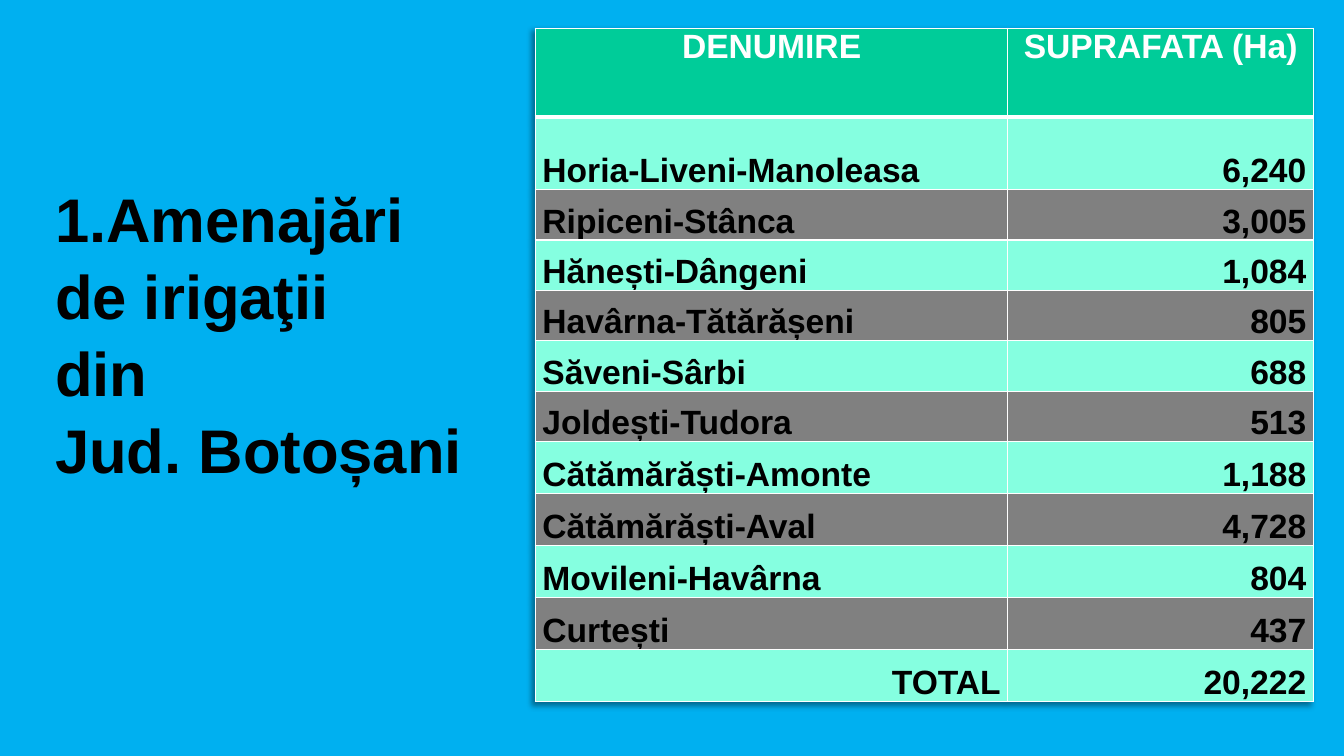
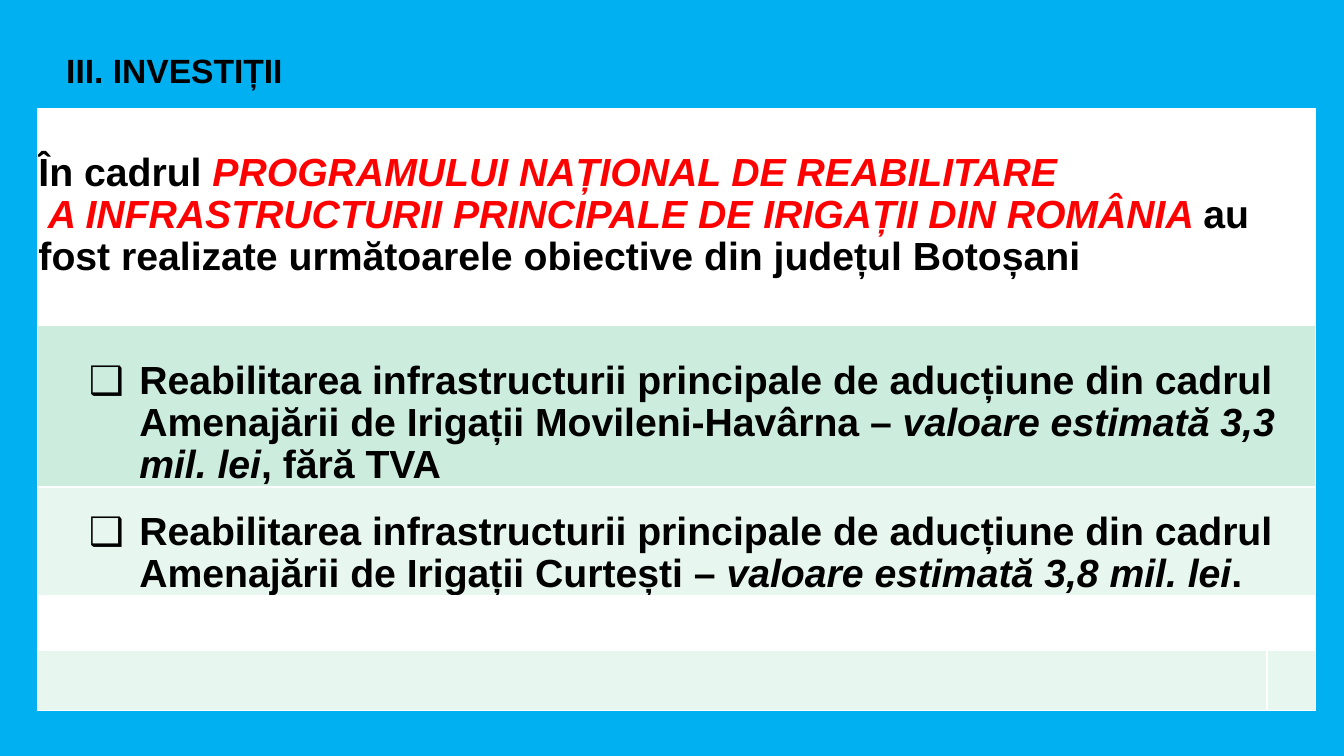
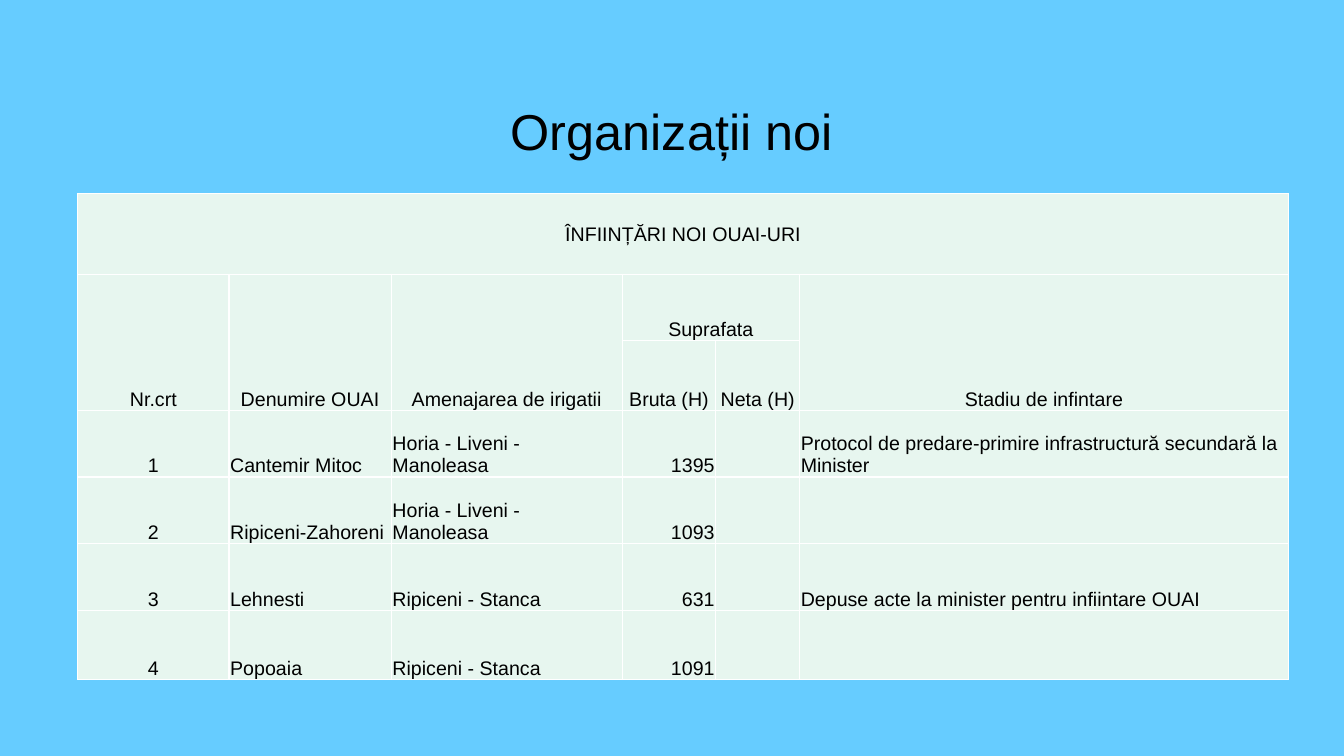
from dataclasses import dataclass

from lxml.etree import SubElement
from pptx import Presentation
from pptx.dml.color import RGBColor
from pptx.enum.text import MSO_ANCHOR, PP_ALIGN
from pptx.oxml import parse_xml
from pptx.oxml.ns import nsdecls, qn
from pptx.util import Cm, Pt


@dataclass(frozen=True)
class Theme:
    font: str = "Arial"
    sky: str = "00B0F0"
    pale: str = "66CCFF"
    ink: str = "000000"
    white: str = "FFFFFF"
    red: str = "FF0000"
    green: str = "00CC99"
    mint: str = "85FFE0"
    gray: str = "808080"
    sage: str = "CCECDE"
    mist: str = "E7F6EF"
    huge: int = 44
    big: int = 36
    lead: int = 28
    mid: int = 24
    small: int = 14


T = Theme()
ALIGN = {"l": PP_ALIGN.LEFT, "c": PP_ALIGN.CENTER, "r": PP_ALIGN.RIGHT}
TOP, MID, LOW = MSO_ANCHOR.TOP, MSO_ANCHOR.MIDDLE, MSO_ANCHOR.BOTTOM
THIN = (0.03, 0.03, 0.03, 0)
WIDE = (0.18, 0, 0.18, 0)

# Content: irrigation areas
AREA_TITLE = ["1.Amenajări de irigaţii", "din", "Jud. Botoșani"]
AREAS = [
    ("DENUMIRE", "SUPRAFATA (Ha)"),
    ("Horia-Liveni-Manoleasa", "6,240"),
    ("Ripiceni-Stânca", "3,005"),
    ("Hănești-Dângeni", "1,084"),
    ("Havârna-Tătărășeni", "805"),
    ("Săveni-Sârbi", "688"),
    ("Joldești-Tudora", "513"),
    ("Cătămărăști-Amonte", "1,188"),
    ("Cătămărăști-Aval", "4,728"),
    ("Movileni-Havârna", "804"),
    ("Curtești", "437"),
    ("TOTAL", "20,222"),
]

# Content: investments; a run is (text, format)
HOT = {"color": T.red, "italic": True}
SLANT = {"italic": True}
WORK = "Reabilitarea infrastructurii principale de aducțiune din cadrul Amenajării de Irigații "
INTRO = [
    [("În cadrul ", {}), ("PROGRAMULUI NAȚIONAL DE REABILITARE", HOT)],
    [(" A INFRASTRUCTURII PRINCIPALE DE IRIGAȚII DIN ROMÂNIA ", HOT),
     ("au fost realizate următoarele obiective din județul Botoșani", {})],
]
GOALS = [
    [(WORK + "Movileni-Havârna – ", {}), ("valoare estimată 3,3 mil. lei", SLANT),
     (", fără TVA", {})],
    [(WORK + "Curtești – ", {}), ("valoare estimată 3,8 mil. lei", SLANT), (".", {})],
]

# Content: new organisations
ORGS = [
    ("ÎNFIINȚĂRI NOI OUAI-URI", "", "", "", "", ""),
    ("Nr.crt", "Denumire OUAI", "Amenajarea de irigatii", "Suprafata", "", "Stadiu de infintare"),
    ("", "", "", "Bruta (H)", "Neta (H)", ""),
    ("1", "Cantemir Mitoc", "Horia - Liveni - Manoleasa", "1395", "",
     "Protocol de predare-primire infrastructură secundară la Minister"),
    ("2", "Ripiceni-Zahoreni", "Horia - Liveni - Manoleasa", "1093", "", ""),
    ("3", "Lehnesti", "Ripiceni - Stanca", "631", "",
     "Depuse acte la minister pentru infiintare OUAI"),
    ("4", "Popoaia", "Ripiceni - Stanca", "1091", "", ""),
]
# First and last cell (row, column) of each merge
ORG_SPANS = [((0, 0), (0, 5)), ((1, 3), (1, 4))] + [((1, c), (2, c)) for c in (0, 1, 2, 5)]


def write(frame, paras, size=T.mid, color=T.ink, bold=False, italic=False,
          align="l", gap=None, bullet=None):
    """Fill a text frame; a paragraph is a string or a list of runs."""
    for i, para in enumerate(paras):
        p = frame.paragraphs[0] if i == 0 else frame.add_paragraph()
        p.alignment = ALIGN[align]
        if gap:
            p.line_spacing = gap
        if bullet:
            props = p._p.get_or_add_pPr()
            props.set("marL", str(Cm(2.54)))
            props.set("indent", str(-Cm(1.27)))
            SubElement(props, qn("a:buFont")).set("typeface", T.font)
            SubElement(props, qn("a:buChar")).set("char", bullet)
        for text, own in [(para, {})] if isinstance(para, str) else para:
            run = p.add_run()
            run.text = text
            font = run.font
            font.name, font.size, font.bold = T.font, Pt(size), bold
            font.italic = own.get("italic", italic)
            font.color.rgb = RGBColor.from_string(own.get("color", color))


def page(deck, back):
    slide = deck.slides.add_slide(deck.slide_layouts[6])
    slide.background.fill.solid()
    slide.background.fill.fore_color.rgb = RGBColor.from_string(back)
    return slide


def label(slide, box, paras, anchor=TOP, **form):
    frame = slide.shapes.add_textbox(*map(Cm, box)).text_frame
    frame.word_wrap = True
    frame.vertical_anchor = anchor
    write(frame, paras, **form)


def grid(slide, left, top, cols, rows, spans=()):
    """Add a plain table with the given column and row sizes."""
    table = slide.shapes.add_table(len(rows), len(cols), Cm(left), Cm(top),
                                   Cm(sum(cols)), Cm(sum(rows))).table
    table.first_row = table.horz_banding = False
    for part, size in zip(table.columns, cols):
        part.width = Cm(size)
    for part, size in zip(table.rows, rows):
        part.height = Cm(size)
    for first, last in spans:
        table.cell(*first).merge(table.cell(*last))
    return table


def paint(cell, paras, fill, anchor=LOW, pads=THIN, under=1, over=1, **form):
    """Set borders, fill, margins and text of a cell."""
    props = cell._tc.get_or_add_tcPr()
    for side, width in (("L", 1), ("R", 1), ("T", over), ("B", under)):
        props.append(parse_xml(
            f'<a:ln{side} {nsdecls("a")} w="{Pt(width)}"><a:solidFill>'
            f'<a:srgbClr val="{T.white}"/></a:solidFill></a:ln{side}>'))
    cell.fill.solid()
    cell.fill.fore_color.rgb = RGBColor.from_string(fill)
    cell.vertical_anchor = anchor
    (cell.margin_left, cell.margin_top,
     cell.margin_right, cell.margin_bottom) = map(Cm, pads)
    write(cell.text_frame, [p for p in paras if p], **form)


def shade(table):
    """Cast a soft shadow to the lower left."""
    table._tbl.tblPr.insert(0, parse_xml(
        f'<a:effectLst {nsdecls("a")}><a:outerShdw blurRad="{Pt(4)}" dist="{Pt(3)}" '
        f'dir="8100000" algn="tr" rotWithShape="0"><a:srgbClr val="{T.ink}">'
        '<a:alpha val="40000"/></a:srgbClr></a:outerShdw></a:effectLst>'))


def areas(deck):
    slide = page(deck, T.sky)
    table = grid(slide, 13.49, 0.71, [11.91, 7.7], [2.24, 1.83] + [1.27] * 5 + [1.31] * 5)
    shade(table)
    for r, row in enumerate(AREAS):
        for c, text in enumerate(row):
            cell = table.cell(r, c)
            if r == 0:
                paint(cell, [text], T.green, anchor=TOP, pads=WIDE, under=3,
                      color=T.white, bold=True, align="c")
            else:
                right = c == 1 or text == "TOTAL"
                paint(cell, [text], T.mint if r % 2 else T.gray, pads=WIDE,
                      over=3 if r == 1 else 1, bold=True, align="r" if right else "l",
                      gap=1.07 if r > 6 else None)
    label(slide, (1.14, 4.37, 11.46, 7.77), AREA_TITLE, size=T.huge, bold=True, gap=1.04)


def funds(deck):
    slide = page(deck, T.sky)
    label(slide, (1.42, 1.14, 32.03, 1.27), ["III. INVESTIȚII"], bold=True)
    table = grid(slide, 0.94, 2.74, [30.99, 1.22], [5.44, 4.09, 2.74, 1.37, 1.52],
                 [((r, 0), (r, 1)) for r in range(3)])
    form = {"size": T.lead, "bold": True, "gap": 0.96}
    paint(table.cell(0, 0), INTRO, T.white, pads=(0.03, 0.03, 0.03, 1.16), under=3, **form)
    for r, (goal, fill) in enumerate(zip(GOALS, (T.sage, T.mist)), 1):
        paint(table.cell(r, 0), [goal], fill, over=3 if r == 1 else 1, bullet="❑", **form)
    for r, fill in ((3, T.white), (4, T.mist)):
        for c in range(2):
            paint(table.cell(r, c), [], fill)


def orgs(deck):
    slide = page(deck, T.pale)
    label(slide, (2.54, 1.7, 28.78, 3.18), ["Organizații noi"], anchor=MID,
          size=T.big, align="c")
    table = grid(slide, 1.96, 4.88, [3.81, 4.09, 5.82, 2.36, 2.11, 12.32],
                 [2.03, 1.68, 1.75, 1.68, 1.68, 1.68, 1.75], ORG_SPANS)
    for r, row in enumerate(ORGS):
        for c, text in enumerate(row):
            paint(table.cell(r, c), [text], T.mist, anchor=LOW if r else MID,
                  size=T.small, align="c" if r < 3 else "cllrrl"[c])


def main():
    deck = Presentation()
    deck.slide_width, deck.slide_height = Cm(33.87), Cm(19.05)
    for build in (areas, funds, orgs):
        build(deck)
    deck.save("out.pptx")


if __name__ == "__main__":
    main()
